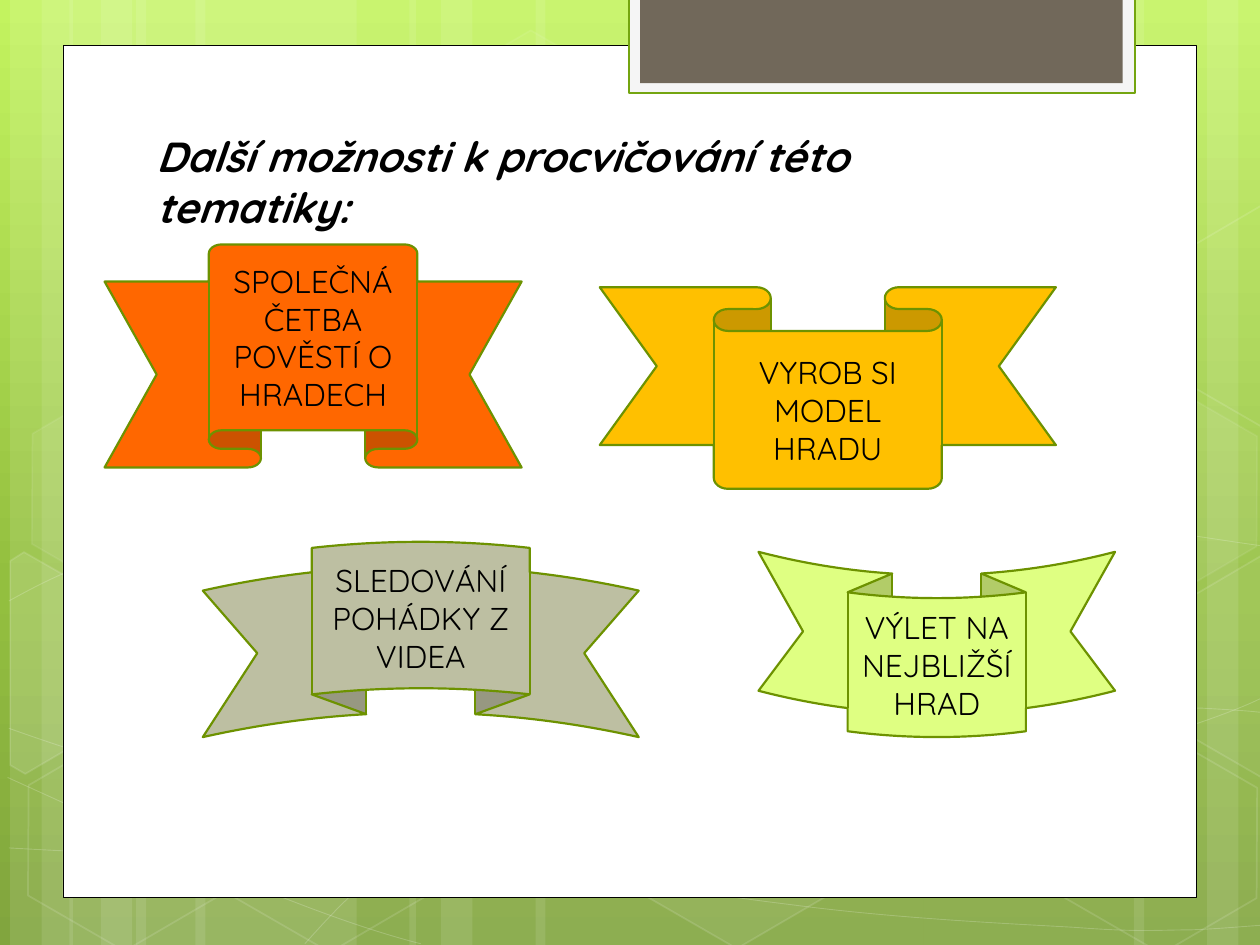
from math import cos, radians, sin
from lxml.etree import SubElement
from copy import deepcopy
from pptx import Presentation
from pptx.dml.color import RGBColor
from pptx.enum.shapes import MSO_SHAPE as SHAPE
from pptx.enum.text import MSO_ANCHOR as ANCHOR, MSO_AUTO_SIZE as AUTO_SIZE, PP_ALIGN as ALIGN
from pptx.oxml.ns import qn
from pptx.util import Inches, Pt

deck = Presentation()
deck.slide_width, deck.slide_height = Inches(10), Inches(7.5)
page = deck.slides.add_slide(deck.slide_layouts[6])
shapes = page.shapes


def paint(shape, fill=None, line=None, width=1, fill_alpha=100, line_alpha=100):
    shape.shadow.inherit = False
    for part, color, alpha, query in (
            (shape.fill, fill, fill_alpha, "./a:solidFill/a:srgbClr"),
            (shape.line.fill, line, line_alpha, "./a:ln/a:solidFill/a:srgbClr")):
        if color is None:
            part.background()
            continue
        part.solid()
        part.fore_color.rgb = RGBColor.from_string(color)
        if alpha < 100:
            node = shape._element.spPr.xpath(query)[0]
            SubElement(node, qn("a:alpha")).set("val", str(alpha * 1000))
    if line:
        shape.line.width = Pt(width)


def write(frame, text, **font):
    frame.word_wrap = True
    para = frame.paragraphs[0]
    span = para.add_run()
    span.text = text
    span.font.color.rgb = RGBColor.from_string("000000")
    for name, value in {"name": "Quicksand", **font}.items():
        setattr(span.font, name, value)
    return para


# Green gradient background
backdrop = page.background.fill
backdrop.gradient()
backdrop.gradient_angle = 270
stop_list = page._element.xpath(".//a:gsLst")[0]
stop_list.append(deepcopy(stop_list[-1]))
for stop, position, color in zip(backdrop.gradient_stops, (0, 0.62, 1),
                                 ("C3F35F", "93BF3F", "81A53E")):
    stop.position = position
    stop.color.rgb = RGBColor.from_string(color)

# Translucent vertical stripes: left, width
stripes = [(1.08, 1.75), (0.08, 0.5), (0.33, 0.83), (1.55, 1.75), (0.55, 0.5), (0.8, 0.83),
           (7.33, 1.75), (9.58, 0.5), (9, 0.83), (4.25, 3.08), (3.25, 0.5), (3.5, 0.83)]
for left, width in stripes:
    stripe = shapes.add_shape(SHAPE.RECTANGLE, Inches(left), 0, Inches(width), Inches(7.5))
    paint(stripe, "FFFFFF", fill_alpha=10)

# Thin curves: start point, then control, control, end for each Bezier segment
curves = [
    [(0.07, 6.73), (0.61, 6.76), (1.15, 6.79), (1.9, 6.78), (2.65, 6.77), (3.58, 6.75),
     (4.58, 6.65), (5.58, 6.55), (7, 6.36), (7.92, 6.17), (8.83, 5.98), (9.77, 5.68),
     (10.07, 5.51)],
    [(0.07, 4.77), (0.36, 4.61), (0.65, 4.46), (1.21, 4.31), (1.78, 4.16), (2.59, 3.94),
     (3.47, 3.87), (4.36, 3.8), (5.44, 3.79), (6.54, 3.87), (7.64, 3.95), (9.47, 4.26),
     (10.07, 4.34)],
    [(0.06, 6.17), (1.27, 6.72), (2.47, 7.27), (3.34, 7.49)],
    [(0.07, 5.78), (0.38, 5.89), (0.7, 6), (1.28, 6.16), (1.86, 6.31), (2.73, 6.56),
     (3.57, 6.73), (4.4, 6.9), (5.45, 7.08), (6.28, 7.18), (7.11, 7.29), (8, 7.33),
     (8.53, 7.36), (9.05, 7.4), (9.19, 7.38), (9.45, 7.38), (9.71, 7.37), (9.89, 7.35),
     (10.07, 7.34)],
    [(2.42, 7.49), (2.6, 7.29), (2.78, 7.09), (3.02, 6.91), (3.26, 6.73), (3.6, 6.53),
     (3.88, 6.39), (4.16, 6.25), (4.33, 6.19), (4.7, 6.09), (5.06, 5.99), (5.73, 5.85),
     (6.08, 5.78), (6.44, 5.71), (6.49, 5.71), (6.8, 5.69), (7.11, 5.66), (7.6, 5.63),
     (7.94, 5.62), (8.29, 5.61), (8.86, 5.62), (8.86, 5.62), (9.08, 5.62), (9.31, 5.62),
     (9.53, 5.62), (9.71, 5.63), (9.88, 5.64), (9.97, 5.65), (10.06, 5.66), (10.03, 5.65),
     (10.06, 5.66)],
]
for points in curves:
    start, *rest = [(Inches(x), Inches(y)) for x, y in points]
    outline = shapes.build_freeform(*start)
    outline.add_line_segments(rest, close=False)
    curve = outline.convert_to_shape()
    # Every three straight segments become one Bezier segment
    track = curve._element.xpath(".//a:custGeom/a:pathLst/a:path")[0]
    legs = track.findall(qn("a:lnTo"))
    for first in range(0, len(legs), 3):
        bend = SubElement(track, qn("a:cubicBezTo"))
        for leg in legs[first:first + 3]:
            bend.append(leg[0])
            track.remove(leg)
    paint(curve, None, "FFFFFF", 0.5, line_alpha=20)

# Faint hexagons: left, top, fill opacity, line opacity
hexagons = [(3.34, 0.36, 4, 8), (4.97, 5.89, 6, 12), (0.11, 5.91, 0, 12), (0.14, 3.12, 7, 8),
            (1.74, 5.92, 0, 12), (7.53, 4.53, 10, 12), (8.34, 5.93, 0, 12), (8.34, 3.14, 7, 8)]
for left, top, fill_alpha, line_alpha in hexagons:
    hexagon = shapes.add_shape(SHAPE.HEXAGON, Inches(left), Inches(top), Inches(1.75), Inches(1.52))
    hexagon.adjustments[0] = 0.285
    hexagon.rotation = 30
    paint(hexagon, "FFFFFF" if fill_alpha else None, "FFFFFF", 1, fill_alpha, line_alpha)

# Hexagons cut off by the slide edges: centre, fill opacity, corners as they stand after turning
cut_hexagons = [
    (0.36, 5.35, 10,
     [(0.08, 4.45), (0.19, 4.38), (0.96, 4.82), (0.95, 5.7), (0.2, 6.14), (0.08, 6.07)]),
    (9.85, 5.2, 4,
     [(9.26, 4.85), (10.01, 4.41), (10.09, 4.46), (10.09, 6.13), (10.02, 6.17), (9.26, 5.73)]),
    (9.85, 2.41, 0,
     [(9.26, 2.07), (10.01, 1.63), (10.1, 1.68), (10.09, 3.35), (10.02, 3.39), (9.26, 2.95)]),
]
c, s = cos(radians(30)), sin(radians(30))
for mid_x, mid_y, fill_alpha, corners in cut_hexagons:
    start, *rest = [(Inches(mid_x + (x - mid_x) * c + (y - mid_y) * s),
                     Inches(mid_y - (x - mid_x) * s + (y - mid_y) * c)) for x, y in corners]
    outline = shapes.build_freeform(*start)
    outline.add_line_segments(rest, close=True)
    cut_hexagon = outline.convert_to_shape()
    cut_hexagon.rotation = 30
    paint(cut_hexagon, "FFFFFF" if fill_alpha else None, "FFFFFF", 1, fill_alpha, 12)

# White panel and the tab at the top
panels = [((0.5, 0.36, 9, 6.76), "FFFFFF", "000000", 0.5),
          ((4.99, -0.02, 4.02, 0.76), "F5F5F5", "74A510", 1.25),
          ((5.08, -0.02, 3.83, 0.68), "71685A", None, 0)]
for place, fill, line, width in panels:
    panel = shapes.add_shape(SHAPE.RECTANGLE, *map(Inches, place))
    paint(panel, fill, line, width)

# Heading
heading = shapes.add_textbox(Inches(1.14), Inches(0.99), Inches(6.35), Inches(1.31))
heading.text_frame.auto_size = AUTO_SIZE.SHAPE_TO_FIT_TEXT
write(heading.text_frame, "Další možnosti k procvičování této tematiky:",
      size=Pt(24), bold=True, italic=True)

# Ribbons with the activities
ribbons = [
    (SHAPE.UP_RIBBON, (0.83, 1.94, 3.31, 1.77), "FF6700", "SPOLEČNÁ ČETBA POVĚSTÍ O HRADECH"),
    (SHAPE.DOWN_RIBBON, (4.76, 2.28, 3.62, 1.6), "FFC000", "VYROB SI MODEL HRADU"),
    (SHAPE.CURVED_UP_RIBBON, (1.61, 4.3, 3.46, 1.55), "BDBFA2", "SLEDOVÁNÍ POHÁDKY Z VIDEA"),
    (SHAPE.CURVED_DOWN_RIBBON, (6.02, 4.38, 2.83, 1.47), "DFFF82", "VÝLET NA NEJBLIŽŠÍ HRAD"),
]
for kind, place, fill, text in ribbons:
    ribbon = shapes.add_shape(kind, *map(Inches, place))
    if kind == SHAPE.DOWN_RIBBON:
        ribbon.adjustments[0] = 0.217
    paint(ribbon, fill, "6D9200", 1.25)
    ribbon.text_frame.vertical_anchor = ANCHOR.MIDDLE
    write(ribbon.text_frame, text, size=Pt(18)).alignment = ALIGN.CENTER

deck.save("out.pptx")
